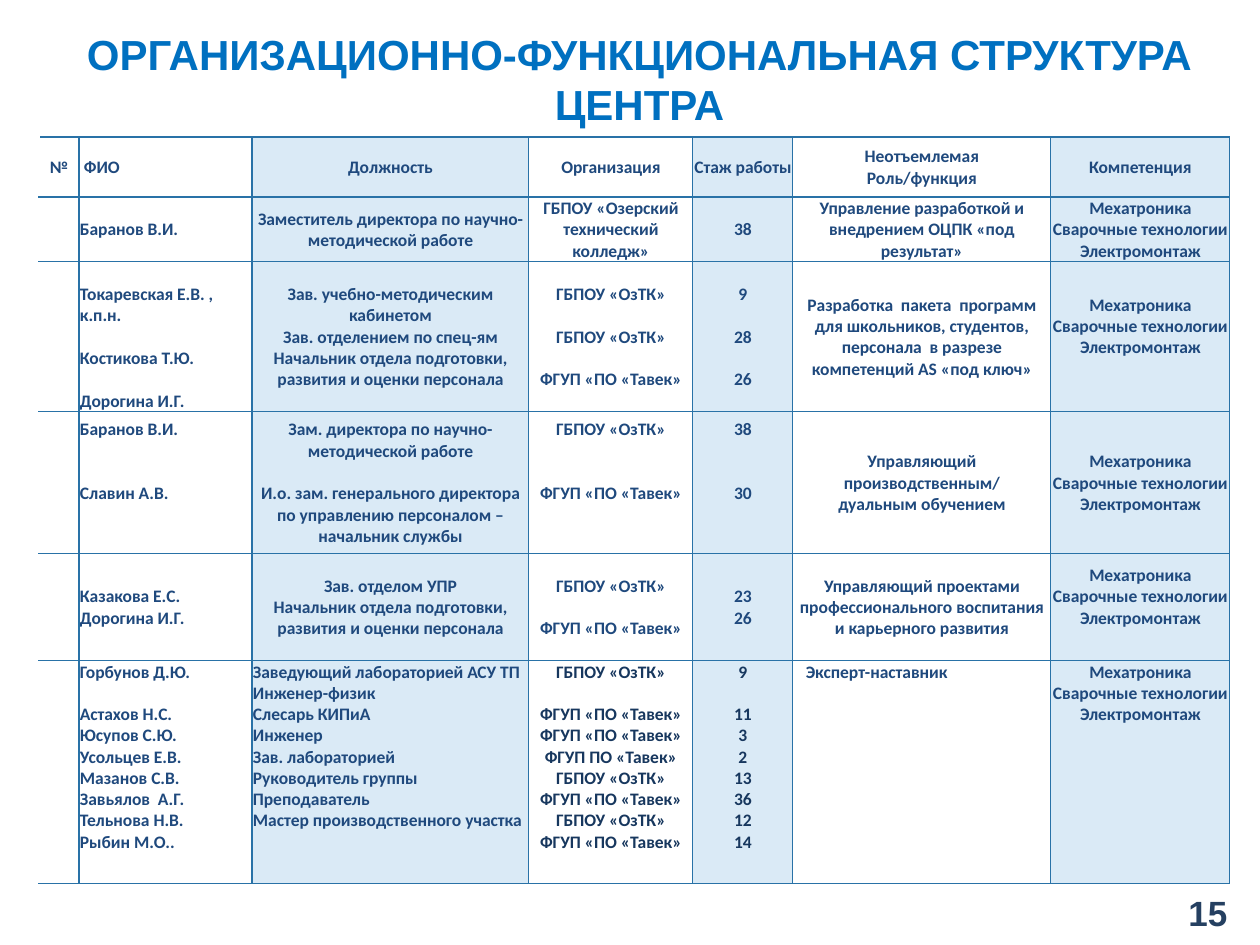
from dataclasses import dataclass

import pptx
import pptx.dml.color
import pptx.enum.text
import pptx.oxml.ns
import pptx.util
from lxml import etree

EMU_PER_PX = 914400 / 126
LINE_PT = 12.2  # line pitch of 10 pt Calibri
BLUE, NAVY, TINT, RULE = "1F497D", "17375E", "DAEAF6", "2972A7"
ALIGN = pptx.enum.text.PP_ALIGN
ANCHOR = pptx.enum.text.MSO_ANCHOR


@dataclass(frozen=True)
class Column:
    width: int
    centred: bool = True
    tinted: bool = False


@dataclass(frozen=True)
class Entry:
    """Lines of one cell: an empty line is a gap, a vertical tab a line break."""
    text: str
    colour: str = BLUE
    left: bool = False
    indent: int = 0


@dataclass(frozen=True)
class Row:
    height: int
    entries: tuple[Entry, ...]
    top: bool = False


def px(length: float) -> int:
    return round(length * EMU_PER_PX)


def rgb(colour: str) -> pptx.dml.color.RGBColor:
    return pptx.dml.color.RGBColor.from_string(colour)


def add_run(paragraph, text: str, size: int, font: str, colour: str) -> None:
    run = paragraph.add_run()
    run.text = text
    run.font.size = pptx.util.Pt(size)
    run.font.name = font
    run.font.bold = True
    run.font.color.rgb = rgb(colour)


def add_border(cell, side: str) -> None:
    qn = pptx.oxml.ns.qn
    line = etree.SubElement(cell._tc.get_or_add_tcPr(), qn(f"a:ln{side}"),
                            w=str(pptx.util.Pt(0.75)))
    fill = etree.SubElement(line, qn("a:solidFill"))
    etree.SubElement(fill, qn("a:srgbClr"), val=RULE)


def fill_entry(cell, entry: Entry, column: Column, top: bool) -> None:
    """Write a cell; outer gaps become margins and inner gaps paragraph spacing."""
    cell.vertical_anchor = ANCHOR.TOP if top else ANCHOR.MIDDLE
    cell.margin_left = cell.margin_right = px(1)
    cell.margin_top, cell.margin_bottom = px(1), 0
    gap = 0
    paragraph = None
    for line in entry.text.split("\n"):
        if not line:
            gap += 1
            continue
        spacing = pptx.util.Pt(gap * LINE_PT)
        if paragraph is None:
            paragraph = cell.text_frame.paragraphs[0]
            cell.margin_top = px(1) + spacing
        else:
            paragraph = cell.text_frame.add_paragraph()
            if gap:
                paragraph.space_before = spacing
        gap = 0
        centred = column.centred and not entry.left
        paragraph.alignment = ALIGN.CENTER if centred else ALIGN.LEFT
        if entry.indent:
            paragraph._p.get_or_add_pPr().set("marL", str(px(entry.indent)))
        for index, part in enumerate(line.split("\v")):
            if index:
                paragraph.add_line_break()
            add_run(paragraph, part, 10, "Calibri", entry.colour)
    if paragraph is not None:
        cell.margin_bottom = pptx.util.Pt(gap * LINE_PT)


def add_staff_table(slide, columns: tuple[Column, ...], rows: tuple[Row, ...]) -> None:
    width = sum(column.width for column in columns)
    height = sum(row.height for row in rows)
    staff = slide.shapes.add_table(len(rows), len(columns), px(39), px(137),
                                   px(width), px(height)).table
    staff.first_row = staff.horz_banding = False
    for c, column in enumerate(columns):
        staff.columns[c].width = px(column.width)
    for r, row in enumerate(rows):
        staff.rows[r].height = px(row.height)
        for c, (column, entry) in enumerate(zip(columns, row.entries)):
            cell = staff.cell(r, c)
            for side in ("L", "R", "T", "B"):
                if c or side != "L":  # the table is open on its left
                    add_border(cell, side)
            if column.tinted:
                cell.fill.solid()
                cell.fill.fore_color.rgb = rgb(TINT)
            else:
                cell.fill.background()
            fill_entry(cell, entry, column, row.top)


COLUMNS = (
    Column(40), Column(173, centred=False), Column(277, tinted=True), Column(164),
    Column(100, tinted=True), Column(258), Column(179, tinted=True),
)
BLANK = Entry("")
COLLEGE, PLANT = "ГБПОУ «ОзТК»", "ФГУП «ПО «Тавек»"
SKILLS = "Мехатроника\nСварочные технологии\vЭлектромонтаж"

ROWS = (
    Row(60, (
        Entry("№"), Entry("ФИО", indent=4), Entry("Должность"), Entry("Организация"),
        Entry("Стаж работы"), Entry("Неотъемлемая\nРоль/функция"), Entry("Компетенция"),
    )),
    Row(64, (
        BLANK,
        Entry("Баранов В.И."),
        Entry("Заместитель директора по научно-методической работе"),
        Entry("ГБПОУ «Озерский технический колледж»"),
        Entry("38"),
        Entry("Управление разработкой и внедрением ОЦПК «под результат»"),
        Entry(SKILLS),
    )),
    Row(150, (
        BLANK,
        Entry("\nТокаревская Е.В. , к.п.н.\n\nКостикова Т.Ю.\n\nДорогина И.Г."),
        Entry("Зав. учебно-методическим кабинетом\nЗав. отделением по спец-ям\n"
              "Начальник отдела подготовки, развития и оценки персонала"),
        Entry(f"{COLLEGE}\n\n{COLLEGE}\n\n{PLANT}"),
        Entry("9\n\n28\n\n26"),
        Entry("Разработка  пакета  программ для школьников, студентов, "
              "персонала  в разрезе компетенций AS «под ключ»"),
        Entry(SKILLS + "\n"),
    )),
    Row(142, (
        BLANK,
        Entry("Баранов В.И.\n\n\nСлавин А.В.\n\n"),
        Entry("Зам. директора по научно-методической работе\n\nИ.о. зам. генерального "
              "директора по управлению персоналом – начальник службы"),
        Entry(f"{COLLEGE}\n\n\n{PLANT}\n\n"),
        Entry("38\n\n\n30\n\n"),
        Entry("Управляющий производственным/\nдуальным обучением"),
        Entry(SKILLS),
    )),
    Row(107, (
        BLANK,
        Entry("Казакова Е.С.\vДорогина И.Г."),
        Entry("Зав. отделом УПР\nНачальник отдела подготовки, развития и оценки персонала"),
        Entry(f"{COLLEGE}\n\n{PLANT}"),
        Entry("23\n26"),
        Entry("Управляющий проектами профессионального воспитания и карьерного развития"),
        Entry(SKILLS + "\n"),
    )),
    Row(223, (
        BLANK,
        Entry("Горбунов Д.Ю.\n\nАстахов Н.С.\nЮсупов С.Ю.\nУсольцев Е.В.\vМазанов С.В.\v"
              "Завьялов  А.Г.\nТельнова Н.В.\vРыбин М.О.."),
        Entry("Заведующий лабораторией АСУ ТП\nИнженер-физик\nСлесарь КИПиА\nИнженер\n"
              "Зав. лабораторией\nРуководитель группы\vПреподаватель\n"
              "Мастер производственного участка", left=True),
        Entry(f"{COLLEGE}\n\n{PLANT}\n{PLANT}\nФГУП ПО «Тавек»\n{COLLEGE}\n{PLANT}\n"
              f"{COLLEGE}\v{PLANT}", NAVY),
        Entry("9\n\n11\n3\n2\n13\n36\n12\n14", NAVY),
        Entry("Эксперт-наставник", left=True, indent=12),
        Entry(SKILLS),
    ), top=True),
)


def main() -> None:
    deck = pptx.Presentation()
    deck.slide_width, deck.slide_height = px(1260), px(945)
    slide = deck.slides.add_slide(deck.slide_layouts[5])

    # Title
    title = slide.shapes.title
    title.left, title.top, title.width, title.height = px(44), 0, px(1191), px(158)
    heading = title.text_frame
    heading.auto_size = pptx.enum.text.MSO_AUTO_SIZE.NONE
    heading.vertical_anchor = ANCHOR.MIDDLE
    heading.paragraphs[0].alignment = ALIGN.CENTER
    add_run(heading.paragraphs[0], "ОРГАНИЗАЦИОННО-ФУНКЦИОНАЛЬНАЯ СТРУКТУРА ЦЕНТРА",
            24, "Arial", "0070C0")

    # Staff table
    add_staff_table(slide, COLUMNS, ROWS)

    # Page number
    page = slide.shapes.add_textbox(px(1176), px(885), px(68), px(55)).text_frame
    page.word_wrap = True
    page.vertical_anchor = ANCHOR.MIDDLE
    add_run(page.paragraphs[0], "15", 20, "Arial", "254061")

    deck.save("out.pptx")


if __name__ == "__main__":
    main()
